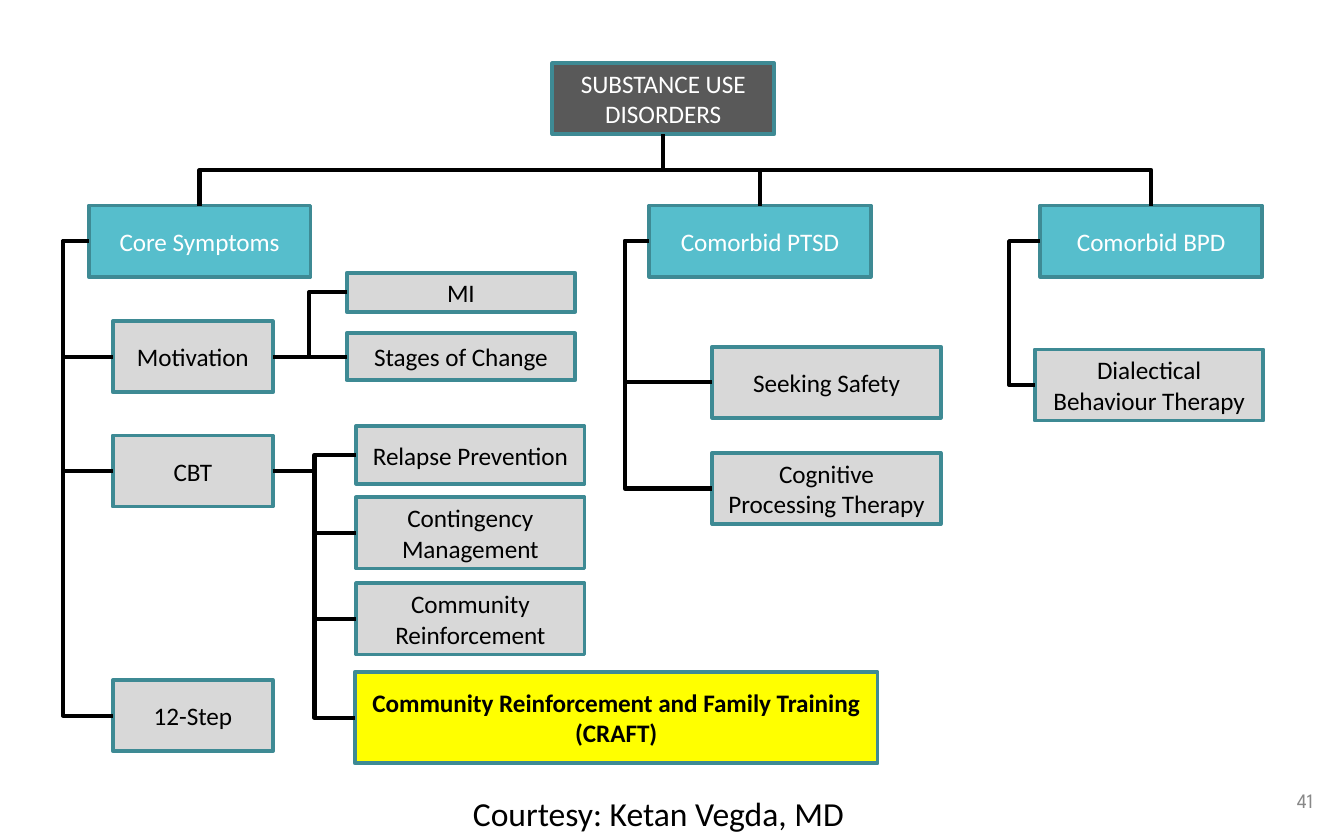
import pptx
import pptx.dml.color
import pptx.enum.shapes
import pptx.enum.text
import pptx.oxml
import pptx.oxml.ns
import pptx.util
from pptx.util import Inches

COLORS = {
    "root": "595959",
    "branch": "56BECC",
    "leaf": "D8D8D8",
    "highlight": "FFFF00",
    "border": "3E8A94",
    "white": "FFFFFF",
    "black": "000000",
    "number": "888888",
}
ALIGN = pptx.enum.text.PP_ALIGN
ANCHOR = pptx.enum.text.MSO_ANCHOR


def rgb(name):
    return pptx.dml.color.RGBColor.from_string(COLORS[name])


def write(frame, text, size=13.5, font="Calibri", color="black", bold=False,
          align=ALIGN.CENTER, anchor=ANCHOR.MIDDLE):
    """Fill a text frame, one paragraph for each line of text."""
    frame.word_wrap = True
    frame.vertical_anchor = anchor
    frame.text = text
    for paragraph in frame.paragraphs:
        paragraph.alignment = align
        for run in paragraph.runs:
            run.font.size = pptx.util.Pt(size)
            run.font.name = font
            run.font.bold = bold
            run.font.color.rgb = rgb(color)


class Chart:
    """Draws the parts of a tree chart on one slide."""

    border_width = pptx.util.Pt(2)
    link_width = pptx.util.Pt(2.25)

    def __init__(self, slide):
        self.shapes = slide.shapes

    def box(self, text, left, top, width=1.7, height=0.53, fill="leaf", **style):
        box = self.shapes.add_shape(
            pptx.enum.shapes.MSO_SHAPE.RECTANGLE,
            Inches(left), Inches(top), Inches(width), Inches(height))
        box.shadow.inherit = False
        box.fill.solid()
        box.fill.fore_color.rgb = rgb(fill)
        box.line.color.rgb = rgb("border")
        box.line.width = self.border_width
        write(box.text_frame, text, **style)
        return box

    def label(self, text, left, top, width, height, **style):
        label = self.shapes.add_textbox(
            Inches(left), Inches(top), Inches(width), Inches(height))
        write(label.text_frame, text, **style)

    def elbow(self, x1, y1, x2, y2, bend=0.5):
        """Add a bent link that turns at the given share of its width."""
        link = self.shapes.add_connector(
            pptx.enum.shapes.MSO_CONNECTOR.ELBOW,
            *(int(value) for value in (x1, y1, x2, y2)))
        link.line.color.rgb = rgb("black")
        link.line.width = self.link_width
        properties = link._element.spPr
        properties.append(pptx.oxml.parse_xml(
            f'<a:effectLst {pptx.oxml.ns.nsdecls("a")}/>'))
        guides = properties.find(
            pptx.oxml.ns.qn("a:prstGeom")).get_or_add_avLst()
        guides.append(pptx.oxml.parse_xml(
            f'<a:gd {pptx.oxml.ns.nsdecls("a")} name="adj1" '
            f'fmla="val {round(bend * 100000)}"/>'))
        return link

    def link_down(self, parent, child):
        """Link bottom centre to top centre with a quarter-turned elbow."""
        x1, y1 = parent.left + parent.width / 2, parent.top + parent.height
        x2, y2 = child.left + child.width / 2, child.top
        leftward = x2 < x1
        half_drop = (y2 - y1) / 2 * (1 if leftward else -1)
        half_span = abs(x2 - x1) / 2
        x, y = (x1 + x2) / 2, (y1 + y2) / 2
        link = self.elbow(x - half_drop, y - half_span,
                          x + half_drop, y + half_span)
        link._element.spPr.find(pptx.oxml.ns.qn("a:xfrm")).set(
            "rot", str((90 if leftward else 270) * 60000))

    def link_side(self, parent, children, trunk):
        """Link a parent to the left sides of its children along a trunk at x."""
        trunk = Inches(trunk)
        x1 = parent.left + (parent.width if trunk > parent.left else 0)
        y1 = parent.top + parent.height / 2
        for child in children:
            self.elbow(x1, y1, child.left, child.top + child.height / 2,
                       (trunk - x1) / (child.left - x1))


def main():
    deck = pptx.Presentation()
    deck.slide_width, deck.slide_height = Inches(10), Inches(6.25)
    chart = Chart(deck.slides.add_slide(deck.slide_layouts[6]))

    disorders = chart.box("SUBSTANCE USE DISORDERS", 4.11, 0.47, 1.65,
                          fill="root", color="white")
    core, ptsd, bpd = [
        chart.box(name, left, 1.53, 1.65, fill="branch", color="white")
        for name, left in (("Core Symptoms", 0.66), ("Comorbid PTSD", 4.83),
                           ("Comorbid BPD", 7.74))]
    motivation, cbt, twelve_step = [
        chart.box(name, 0.84, top, 1.19)
        for name, top in (("Motivation", 2.39), ("CBT", 3.24), ("12-Step", 5.06))]
    motivation_methods = [
        chart.box("MI", 2.58, 2.03, height=0.29),
        chart.box("Stages of Change", 2.58, 2.48, height=0.35)]
    cbt_methods = [
        chart.box("Relapse Prevention", 2.65, 3.17, height=0.43),
        chart.box("Contingency Management", 2.65, 3.7),
        chart.box("Community Reinforcement", 2.65, 4.34),
        chart.box("Community Reinforcement and Family Training\n(CRAFT)",
                  2.64, 5, 3.89, 0.68, fill="highlight", bold=True)]
    ptsd_therapies = [
        chart.box("Seeking Safety", 5.3, 2.58),
        chart.box("Cognitive Processing Therapy", 5.3, 3.37)]
    bpd_therapy = chart.box("Dialectical Behaviour Therapy", 7.7, 2.6)

    for branch in (core, bpd, ptsd):
        chart.link_down(disorders, branch)
    chart.link_side(core, [motivation, cbt, twelve_step], 0.47)
    chart.link_side(motivation, motivation_methods, 2.3)
    chart.link_side(cbt, cbt_methods, 2.34)
    chart.link_side(ptsd, ptsd_therapies, 4.65)
    chart.link_side(bpd, [bpd_therapy], 7.51)

    chart.label("Courtesy: Ketan Vegda, MD", 3.42, 5.85, 3.11, 0.4,
                size=18, align=ALIGN.LEFT, anchor=ANCHOR.TOP)
    chart.label("41", 9.5, 5.79, 0.42, 0.33,
                size=11, font="League Spartan", color="number")
    deck.save("out.pptx")


if __name__ == "__main__":
    main()
